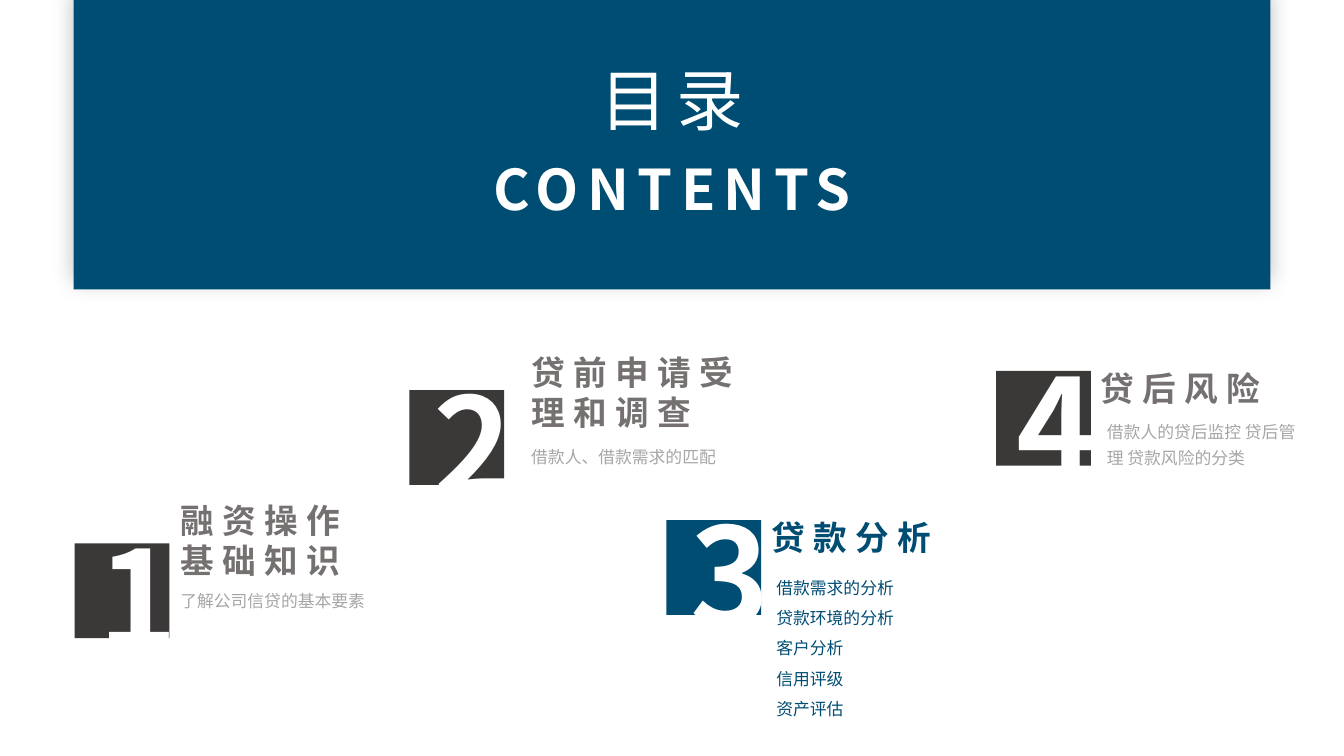
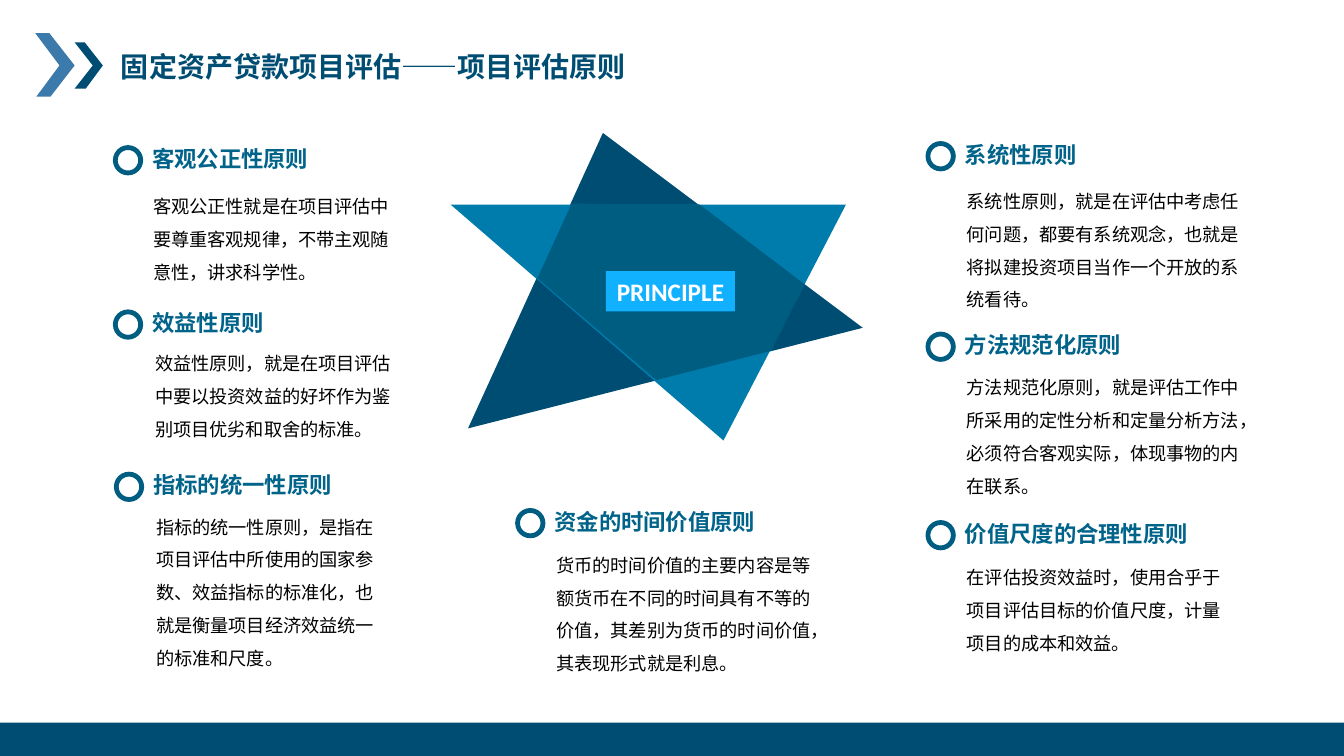
import pptx
import pptx.util
import pptx.dml.color
import pptx.enum.shapes
import pptx.enum.text
import pptx.oxml
import pptx.oxml.ns

Inches, Pt = pptx.util.Inches, pptx.util.Pt
RGBColor = pptx.dml.color.RGBColor
SHAPE = pptx.enum.shapes.MSO_SHAPE
ANCHOR = pptx.enum.text.MSO_ANCHOR
ALIGN = pptx.enum.text.PP_ALIGN
qn = pptx.oxml.ns.qn

# Shared style
NAVY = RGBColor(0x00, 0x4D, 0x73)
TEAL = RGBColor(0x00, 0x5D, 0x82)
HEADING = RGBColor(0x00, 0x63, 0x8A)
BLUE = RGBColor(0x00, 0x7C, 0xAC)
STEEL = RGBColor(0x3C, 0x7A, 0xAB)
SKY = RGBColor(0x12, 0xB1, 0xFF)
CHARCOAL = RGBColor(0x3B, 0x38, 0x38)
GRAY = RGBColor(0x76, 0x71, 0x71)
SILVER = RGBColor(0xA6, 0xA6, 0xA6)
WHITE = RGBColor(0xFF, 0xFF, 0xFF)
BLACK = RGBColor(0x00, 0x00, 0x00)
CJK, LATIN = "Noto Sans CJK SC", "Calibri"
SHADOW = (
    '<a:effectLst xmlns:a="http://schemas.openxmlformats.org/drawingml/2006/main">'
    '<a:outerShdw blurRad="203200" dist="63500" dir="16200000" algn="ctr" rotWithShape="0">'
    '<a:srgbClr val="000000"><a:alpha val="25000"/></a:srgbClr></a:outerShdw></a:effectLst>')

# Contents page: number, badge place, heading, heading box, detail, detail box
CHAPTERS = [
    ("1", (0.74, 5.39), "融资操作基础知识", (1.69, 4.87, 2.12, 0.94),
     "了解公司信贷的基本要素", (1.69, 5.75, 2.12, 0.36)),
    ("2", (4.06, 3.87), "贷前申请受理和调查", (5.17, 3.44, 2.53, 0.9),
     "借款人、借款需求的匹配", (5.17, 4.32, 2.12, 0.36)),
    ("3", (6.61, 5.16), "贷款分析", (7.55, 5.16, 2.12, 0.42),
     ["借款需求的分析", "贷款环境的分析", "客户分析", "信用评级", "资产评估"],
     (7.6, 5.58, 2.38, 1.58)),
    ("4", (9.88, 3.68), "贷后风险", (10.82, 3.68, 2.12, 0.42),
     "借款人的贷后监控 贷后管理 贷款风险的分类", (10.88, 4.07, 2.12, 0.62)),
]
CURRENT = "3"

# Principles page: ring place, heading, text, text box
PRINCIPLES = [
    ((9.18, 1.4), "系统性原则",
     "系统性原则，就是在评估中考虑任何问题，都要有系统观念，也就是将拟建投资项目当作一个开放的系统看待。",
     (9.49, 1.73, 2.98, 1.38)),
    ((9.18, 3.29), "方法规范化原则",
     "方法规范化原则，就是评估工作中所采用的定性分析和定量分析方法，必须符合客观实际，体现事物的内在联系。",
     (9.49, 3.58, 2.98, 1.38)),
    ((9.18, 5.16), "价值尺度的合理性原则",
     "在评估投资效益时，使用合乎于项目评估目标的价值尺度，计量项目的成本和效益。",
     (9.49, 5.46, 2.86, 1.05)),
    ((1.12, 1.44), "客观公正性原则",
     "客观公正性就是在项目评估中要尊重客观规律，不带主观随意性，讲求科学性。",
     (1.42, 1.78, 2.62, 1.05)),
    ((1.12, 3.07), "效益性原则",
     "效益性原则，就是在项目评估中要以投资效益的好坏作为鉴别项目优劣和取舍的标准。",
     (1.44, 3.34, 2.7, 1.05)),
    ((1.13, 4.68), "指标的统一性原则",
     "指标的统一性原则，是指在项目评估中所使用的国家参数、效益指标的标准化，也就是衡量项目经济效益统一的标准和尺度。",
     (1.45, 4.96, 2.46, 1.71)),
    ((5.11, 5.04), "资金的时间价值原则",
     "货币的时间价值的主要内容是等额货币在不同的时间具有不等的价值，其差别为货币的时间价值，其表现形式就是利息。",
     (5.42, 5.34, 2.86, 1.38)),
]
CHEVRONS = [
    (STEEL, [(0.35, 0.33), (0.49, 0.33), (0.74, 0.65), (0.5, 0.96), (0.36, 0.96), (0.59, 0.65)]),
    (NAVY, [(0.74, 0.42), (0.84, 0.42), (1.02, 0.65), (0.85, 0.88), (0.74, 0.88), (0.92, 0.65)]),
]
OVERLAP = [(5.67, 2.02), (6.94, 2.03), (7.98, 2.82), (7.65, 3.48), (6.51, 3.77), (5.33, 2.76)]


def paint(shape, color):
    shape.fill.solid()
    shape.fill.fore_color.rgb = color
    shape.line.fill.background()
    shape.shadow.inherit = False
    return shape


def add_block(page, kind, box, color):
    return paint(page.shapes.add_shape(kind, *map(Inches, box)), color)


def add_outline(page, points, color):
    builder = page.shapes.build_freeform(Inches(points[0][0]), Inches(points[0][1]))
    builder.add_line_segments([(Inches(x), Inches(y)) for x, y in points[1:]], close=True)
    return paint(builder.convert_to_shape(), color)


def write(shape, lines, size, color, font=CJK, bold=False, align=ALIGN.LEFT,
          anchor=ANCHOR.TOP, leading=1.0, after=0, tracking=0, wrap=True):
    frame = shape.text_frame
    frame.text = lines if isinstance(lines, str) else "\n".join(lines)
    frame.word_wrap = wrap
    frame.auto_size = pptx.enum.text.MSO_AUTO_SIZE.NONE
    frame.vertical_anchor = anchor
    for para in frame.paragraphs:
        para.alignment, para.line_spacing = align, leading
        para.space_before, para.space_after = Pt(0), Pt(after)
        para.font.size, para.font.bold, para.font.name = Pt(size), bold, font
        para.font.color.rgb = color
        # East Asian typeface, letter spacing and no bullet
        props = para._p.get_or_add_pPr()
        props.set("marL", "0")
        props.set("indent", "0")
        defaults = props.find(qn("a:defRPr"))
        defaults.set("spc", str(tracking * 100))
        east = pptx.oxml.parse_xml(
            '<a:ea xmlns:a="http://schemas.openxmlformats.org/drawingml/2006/main"/>')
        east.set("typeface", CJK)
        defaults.find(qn("a:latin")).addnext(east)
        defaults.addprevious(defaults.makeelement(qn("a:buNone"), {}))


def add_text(page, box, lines, size, color, **style):
    write(page.shapes.add_textbox(*map(Inches, box)), lines, size, color, **style)


def fill_placeholder(shape, box, lines, size, color, **style):
    shape.left, shape.top, shape.width, shape.height = map(Inches, box)
    write(shape, lines, size, color, **style)
    shape.element.getparent().append(shape.element)


def build_contents(deck):
    page = deck.slides.add_slide(deck.slide_layouts[1])
    title, listing = page.placeholders[0], page.placeholders[1]

    # Title band
    band = add_block(page, SHAPE.RECTANGLE, (0.73, -0.01, 11.87, 2.88), NAVY)
    effects = band.element.spPr.find(qn("a:effectLst"))
    effects.getparent().replace(effects, pptx.oxml.parse_xml(SHADOW))
    centred = dict(align=ALIGN.CENTER, anchor=ANCHOR.BOTTOM, tracking=6)
    add_text(page, (0.73, 1.29, 11.87, 0.96), "CONTENTS", 40, WHITE, bold=True, **centred)
    fill_placeholder(title, (0.73, 0.47, 11.87, 0.96), "目录", 48, WHITE,
                     font="Roboto", **centred)

    # Chapters
    for number, (left, top), heading, heading_box, detail, detail_box in CHAPTERS:
        current = number == CURRENT
        add_block(page, SHAPE.RECTANGLE, (left, top, 0.94, 0.94), NAVY if current else CHARCOAL)
        shift = 0.1 if number == "4" else 0.14
        add_text(page, (left + shift, top - 0.34, 0.95, 1.72), number, 96, WHITE, bold=True)
        add_text(page, heading_box, heading, 24, NAVY if current else GRAY,
                 bold=True, anchor=ANCHOR.BOTTOM, tracking=6)
        if current:
            fill_placeholder(listing, detail_box, detail, 12, NAVY, leading=1.5)
        else:
            add_text(page, detail_box, detail, 12, SILVER, leading=1.3)


def build_principles(deck):
    page = deck.slides.add_slide(deck.slide_layouts[5])

    # Header and footer
    for color, points in CHEVRONS:
        add_outline(page, points, color)
    add_block(page, SHAPE.RECTANGLE, (0, 7.17, 13.33, 0.33), NAVY)
    fill_placeholder(page.shapes.title, (1.1, 0.44, 5.79, 0.44),
                     "固定资产贷款项目评估——项目评估原则", 20, NAVY, bold=True)

    # Crossed triangles
    for box, color, turn, peak in [((4.27, 1.28, 4.04, 2.51), NAVY, 345.7, 0.5),
                                   ((4.47, 2.03, 3.92, 2.34), BLUE, 180, 0.31)]:
        triangle = add_block(page, SHAPE.ISOSCELES_TRIANGLE, box, color)
        triangle.rotation = turn
        triangle.adjustments[0] = peak
    add_outline(page, OVERLAP, TEAL)
    label = add_block(page, SHAPE.RECTANGLE, (6.01, 2.69, 1.28, 0.4), SKY)
    write(label, "PRINCIPLE", 18, WHITE, font=LATIN, bold=True, align=ALIGN.CENTER,
          anchor=ANCHOR.MIDDLE, wrap=False)

    # Principles
    for (left, top), heading, text, text_box in PRINCIPLES:
        ring = add_block(page, SHAPE.DONUT, (left, top, 0.3, 0.3), TEAL)
        ring.adjustments[0] = 0.16
        add_text(page, (left + 0.29, top - 0.05, 2.45, 0.37), heading, 16, HEADING,
                 font=LATIN, bold=True, wrap=False)
        add_text(page, text_box, text, 13, BLACK, font=LATIN, leading=1.5, after=6)


def main():
    deck = pptx.Presentation()
    deck.slide_width, deck.slide_height = Inches(13.33), Inches(7.5)
    build_contents(deck)
    build_principles(deck)
    deck.save("out.pptx")


if __name__ == "__main__":
    main()
